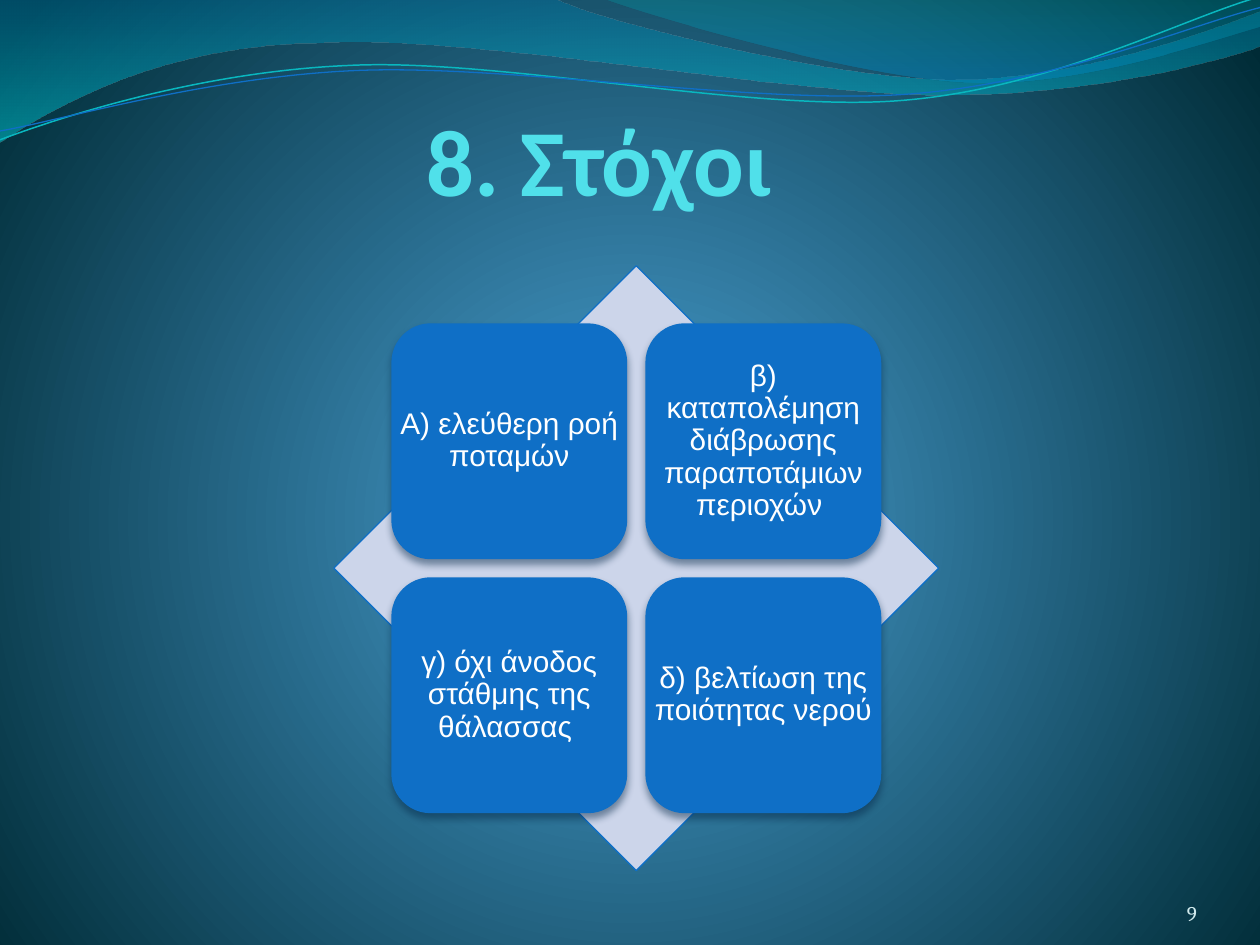
import pptx
import pptx.dml.color
import pptx.enum.shapes
import pptx.enum.text
import pptx.oxml
import pptx.oxml.ns
import pptx.util

COLUMNS, ROWS = 10, 7.5
UNIT = pptx.util.Inches(1)
COLORS = {
    "glow": "4AA2D6", "night": "002B36", "title": "50E0EA", "number": "D1EAED",
    "diamond": "CCD5EA", "blue": "0F6FC6", "shadow": "042747", "white": "FFFFFF",
    "teal": "09B7BF", "band_top": "0074A0", "band_bottom": "00C4CD",
    "crest_low": "008ABF", "crest_high": "00A0A8",
}
BAND = [
    (0, 0), (4.4, -0.01), (4.76, 0.17, 6.64, 0.63, 7.58, 0.63),
    (8.53, 0.63, 9.58, 0.26, 10, 0.09), (10.01, 0.36),
    (9.83, 0.44, 8.7, 0.76, 7.46, 0.75), (6.22, 0.75, 3.82, 0.28, 2.57, 0.34),
    (1.29, 0.35, 0.46, 0.83, -0.01, 1.13), (0, 0),
]
CREST = [
    (4.79, -0.01), (5.09, 0.11, 6.82, 0.62, 7.69, 0.65),
    (8.56, 0.69, 9.61, 0.32, 10, 0.21), (10, 0), (4.79, -0.01),
]
TEAL_WAVE = [
    (0, 1.11), (0.48, 0.93, 1.58, 0.57, 2.77, 0.52),
    (3.95, 0.46, 5.93, 0.89, 7.13, 0.8), (8.33, 0.71, 9.38, 0.15, 9.98, -0.02),
]
BLUE_WAVE = [
    (0, 1.04), (0.47, 0.96, 1.64, 0.61, 2.83, 0.56),
    (4.03, 0.51, 5.97, 0.83, 7.17, 0.75), (8.36, 0.67, 9.41, 0.21, 10, 0.06),
]
GOALS = [
    "Α) ελεύθερη ροή ποταμών",
    "β) καταπολέμηση διάβρωσης παραποτάμιων περιοχών ",
    "γ) όχι άνοδος στάθμης της θάλασσας ",
    "δ) βελτίωση της ποιότητας νερού ",
]


def grid(*cells):
    """Convert grid columns and rows to slide lengths."""
    return [pptx.util.Emu(round(c * UNIT)) for c in cells]


def rgb(name):
    """Look up a named colour."""
    return pptx.dml.color.RGBColor.from_string(COLORS[name])


def set_gradient(parent, stops, direction):
    """Replace the gradient inside parent by the given stops and direction."""
    grad = parent.find(".//" + pptx.oxml.ns.qn("a:gradFill"))
    marks = "".join(
        f'<a:gs pos="{pos * 1000}"><a:srgbClr val="{COLORS[name]}">'
        f'<a:alpha val="{alpha * 1000}"/></a:srgbClr></a:gs>'
        for pos, name, alpha in stops)
    new = pptx.oxml.parse_xml(
        f'<a:gradFill {pptx.oxml.ns.nsdecls("a")} rotWithShape="1">'
        f'<a:gsLst>{marks}</a:gsLst>{direction}</a:gradFill>')
    grad.getparent().replace(grad, new)


def add_outline(s, outline, close):
    """Draw a freeform whose six-number parts are cubic curves."""
    points = [grid(*part[i:i + 2]) for part in outline for i in range(0, len(part), 2)]
    builder = s.shapes.build_freeform(*points[0])
    builder.add_line_segments(points[1:], close=close)
    sp = builder.convert_to_shape()
    sp.shadow.inherit = False
    segments = iter(sp._element.findall(".//" + pptx.oxml.ns.qn("a:lnTo")))
    for part in outline[1:]:
        segment = next(segments)
        if len(part) == 6:
            curve = pptx.oxml.parse_xml(
                f'<a:cubicBezTo {pptx.oxml.ns.nsdecls("a")}/>')
            segment.addprevious(curve)
            for line in (segment, next(segments), next(segments)):
                curve.append(line[0])
                line.getparent().remove(line)
    return sp


def add_backdrop(s):
    """Fill the background and draw the waves along the top."""
    s.background.fill.gradient()
    set_gradient(s._element, [(0, "glow", 100), (100, "night", 100)],
                 '<a:path path="circle"><a:fillToRect l="50000" t="55000" '
                 'r="50000" b="45000"/></a:path>')
    for outline, stops, angle in (
            (BAND, [(0, "band_top", 45), (100, "band_bottom", 55)], 90),
            (CREST, [(20, "crest_low", 45), (100, "crest_high", 30)], 270)):
        sp = add_outline(s, outline, True)
        sp.line.fill.background()
        sp.fill.gradient()
        set_gradient(sp._element, stops, f'<a:lin ang="{angle * 60000}" scaled="0"/>')
    for outline, color, width in ((TEAL_WAVE, "teal", 0.85), (BLUE_WAVE, "blue", 0.75)):
        sp = add_outline(s, outline, False)
        sp.fill.background()
        sp.line.color.rgb = rgb(color)
        sp.line.width = pptx.util.Pt(width)


def set_text(sp, text, font, size, color, align, anchor, insets=(0, 0, 0, 0)):
    """Write one formatted paragraph into a shape."""
    tf = sp.text_frame
    tf.word_wrap = True
    tf.auto_size = pptx.enum.text.MSO_AUTO_SIZE.NONE
    tf.vertical_anchor = anchor
    tf.margin_left, tf.margin_top, tf.margin_right, tf.margin_bottom = grid(*insets)
    p = tf.paragraphs[0]
    p.text = text
    p.alignment = align
    p.font.name = font
    p.font.size = pptx.util.Pt(size)
    p.font.color.rgb = rgb(color)
    return p


def add_title(s, box):
    """Place the title in front of the waves."""
    title = s.shapes.title
    s.shapes._spTree.append(title._element)
    title.left, title.top, title.width, title.height = grid(*box)
    p = set_text(title, "8. Στόχοι", "Calibri", 54, "title",
                 pptx.enum.text.PP_ALIGN.CENTER, pptx.enum.text.MSO_ANCHOR.BOTTOM,
                 (0, 0, 0.02, 0))
    p.font.bold = True


def add_plain_shape(s, kind, box, color):
    """Add a filled preset shape without line or shadow."""
    sp = s.shapes.add_shape(kind, *grid(*box))
    sp.shadow.inherit = False
    sp.fill.solid()
    sp.fill.fore_color.rgb = rgb(color)
    sp.line.fill.background()
    return sp


def add_card(s, box, text):
    """Add a rounded card with a soft shadow and its text."""
    sp = add_plain_shape(s, pptx.enum.shapes.MSO_SHAPE.ROUNDED_RECTANGLE, box, "blue")
    effects = sp._element.spPr.find(pptx.oxml.ns.qn("a:effectLst"))
    effects.append(pptx.oxml.parse_xml(
        f'<a:outerShdw {pptx.oxml.ns.nsdecls("a")} blurRad="{pptx.util.Pt(4.5)}" '
        f'dist="{pptx.util.Pt(3)}" dir="5400000" rotWithShape="0">'
        f'<a:srgbClr val="{COLORS["shadow"]}"><a:alpha val="48000"/></a:srgbClr>'
        '</a:outerShdw>'))
    label = s.shapes.add_textbox(*grid(*box))
    p = set_text(label, text, "Arial", 17, "white", pptx.enum.text.PP_ALIGN.CENTER,
                 pptx.enum.text.MSO_ANCHOR.MIDDLE, (0.07,) * 4)
    p.line_spacing = 0.9


def add_matrix(s, box, goals):
    """Draw a diamond with a two by two grid of goal cards over it."""
    left, top, width, height = box
    sp = add_plain_shape(s, pptx.enum.shapes.MSO_SHAPE.DIAMOND, box, "diamond")
    sp.line.color.rgb = rgb("blue")
    sp.line.width = pptx.util.Pt(0.75)
    margin, pitch, size = 0.095, 0.42, 0.39
    for i, goal in enumerate(goals):
        row, column = divmod(i, 2)
        add_card(s, (left + (margin + column * pitch) * width,
                     top + (margin + row * pitch) * height,
                     size * width, size * height), goal)


def add_number(s, box):
    """Write the page number."""
    set_text(s.shapes.add_textbox(*grid(*box)), "9", "Cambria", 12, "number",
             pptx.enum.text.PP_ALIGN.RIGHT, pptx.enum.text.MSO_ANCHOR.BOTTOM)


def main():
    """Build the slide and save it."""
    prs = pptx.Presentation()
    prs.slide_width, prs.slide_height = grid(COLUMNS, ROWS)
    s = prs.slides.add_slide(prs.slide_layouts[5])
    add_backdrop(s)
    add_title(s, (0.47, 0.23, 8.59, 1.48))
    add_matrix(s, (2.65, 2.11, 4.8, 4.8), GOALS)
    add_number(s, (8.67, 6.95, 0.83, 0.4))
    prs.save("out.pptx")


if __name__ == "__main__":
    main()
